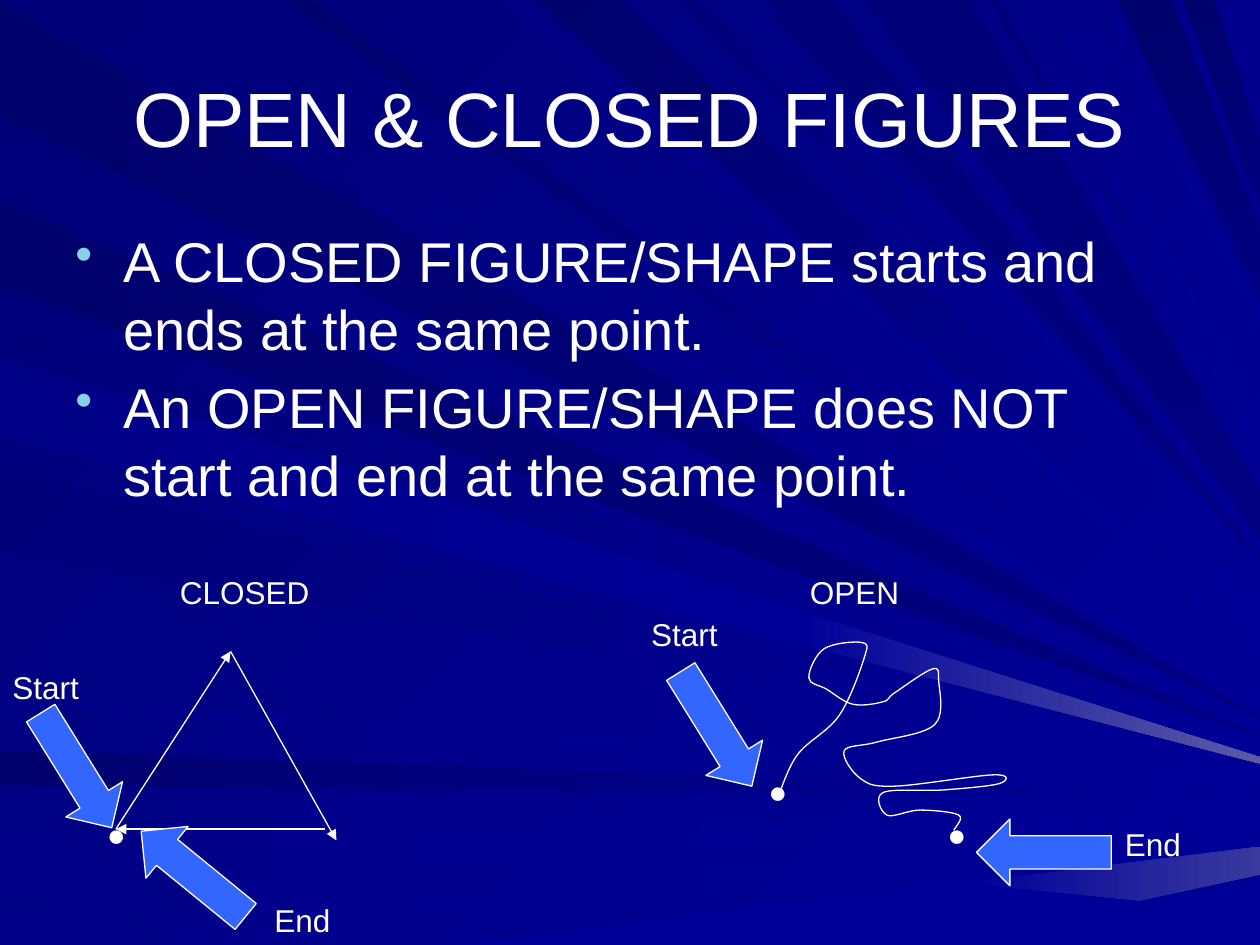
from dataclasses import dataclass

from lxml import etree
from pptx import Presentation
from pptx import util as u
from pptx.dml.color import RGBColor
from pptx.enum import shapes, text
from pptx.oxml import ns

COLORS = {"white": "FFFFFF", "arrow": "3366FF", "bullet": "86D1EC", "deep": "00006C",
          "dark": "000078", "navy": "000080", "middle": "000087", "blue": "000099",
          "glow": "5A5AA6", "haze": "39399E"}
FONT = "Arial"
WIDTH, HEIGHT = 10, 7.5
GLOW_START = 0.63


@dataclass
class Beam:
    """A beam from a span of one slide edge to a span of the right edge."""
    edge: str
    near: tuple
    far: tuple
    start: str
    end: str = "blue"
    angle: int = 0
    tip: str = ""


@dataclass
class Label:
    """A short text and its place in inches."""
    words: str
    left: float
    top: float
    width: float
    wrap: bool = True


@dataclass
class BlockArrow:
    """A block arrow turned clockwise by some degrees."""
    left: float
    top: float
    rotation: float


BEAMS = [
    Beam("left", (0.02, 0.93), (5.69, 5.7), "deep", "navy"),
    Beam("top", (0.26, 1.01), (5.63, 5.62), "dark", angle=45),
    Beam("left", (5.96, 6.23), (6.31, 6.32), "deep"),
    Beam("left", (6.65, 7.04), (6.43, 6.51), "middle"),
    Beam("left", (7.35, 7.5), (6.62, 6.63), "middle"),
    Beam("bottom", (3.64, 7.42), (6.72, 6.94), "blue", tip="haze"),
    Beam("left", (2.58, 2.7), (5.88, 5.89), "dark", angle=45),
    Beam("left", (1.59, 2.28), (5.84, 5.85), "deep", "navy"),
    Beam("top", (3.98, 4.16), (5.21, 5.15), "middle", angle=45),
    Beam("top", (4.26, 4.92), (5.07, 4.79), "deep", angle=45),
    Beam("top", (5.4, 5.52), (4.64, 4.63), "dark", angle=45),
    Beam("top", (6.06, 6.61), (4.46, 4.45), "dark", "navy", 90),
    Beam("top", (8.87, 9.3), (2.37, 1.83), "deep", "navy", 90),
    Beam("top", (9.39, 9.64), (1.67, 1.14), "deep", "navy", 90),
    Beam("left", (2.78, 3.42), (5.96, 6.02), "dark", angle=45),
    Beam("left", (3.74, 4.37), (6.05, 6.06), "dark", angle=45),
    Beam("left", (5.52, 5.6), (6.21, 6.23), "middle"),
    Beam("top", (2.25, 2.47), (5.52, 5.47), "deep", angle=45),
    Beam("top", (5.77, 5.88), (4.54, 4.53), "middle", angle=45),
    Beam("top", (6.86, 7.7), (4.28, 3.9), "dark", "navy", 90),
    Beam("top", (7.85, 7.92), (3.6, 3.54), "dark", angle=45),
    Beam("top", (8.15, 8.24), (3.36, 3.35), "middle", angle=45),
    Beam("top", (8.65, 8.72), (2.58, 2.49), "middle", angle=45),
    Beam("left", (2.83, 3.47), (6.01, 6.06), "middle", tip="glow"),
]
STATEMENTS = ["A CLOSED FIGURE/SHAPE starts and ends at the same point.",
              "An OPEN FIGURE/SHAPE does NOT start and end at the same point."]
TRIANGLE_SIDES = [((0.92, 6.58), (1.83, 5.17)), ((1.83, 5.17), (2.67, 6.67)),
                  ((2.58, 6.58), (0.92, 6.58))]
SCRIBBLE = [
    (6.17, 6.34), (6.33, 5.99), (6.66, 5.68), (6.86, 5.22), (6.84, 5.1), (6.54, 5.15),
    (6.42, 5.38), (6.56, 5.47), (6.77, 5.59), (7.01, 5.57), (7.1, 5.5), (7.4, 5.31),
    (7.45, 5.4), (7.42, 5.75), (6.96, 5.89), (6.7, 5.96), (6.83, 6.18), (7.1, 6.24),
    (7.89, 6.15), (7.93, 6.22), (7.49, 6.27), (7.01, 6.29), (7.04, 6.47), (7.3, 6.43),
    (7.61, 6.47), (7.57, 6.59)]
LABELS = [Label("CLOSED", 1.33, 4.5, 1.35), Label("OPEN", 6.33, 4.5, 1.1),
          Label("●", 0.75, 6.42, 0.35, False), Label("●", 6, 6.08, 0.35, False),
          Label("●", 7.42, 6.42, 0.35, False),
          Label("Start", 0, 5.25, 1.25), Label("End", 2.08, 7.1, 0.93),
          Label("Start", 5.07, 4.83, 0.85), Label("End", 8.83, 6.5, 0.85)]
BLOCK_ARROWS = [BlockArrow(0.07, 5.85, 58.2), BlockArrow(1, 6.67, 219.2),
                BlockArrow(5.15, 5.52, 58.2), BlockArrow(7.75, 6.5, 180)]


def rgb(name: str) -> RGBColor:
    return RGBColor.from_string(COLORS[name])


def paint(fill, start: str, end: str, angle: int = 0) -> None:
    if start == end:
        fill.solid()
        fill.fore_color.rgb = rgb(start)
        return
    fill.gradient()
    fill.gradient_angle = (360 - angle) % 360
    for stop, color in zip(fill.gradient_stops, (start, end)):
        stop.color.rgb = rgb(color)


def outline(line) -> None:
    line.color.rgb = rgb("white")
    line.width = u.Pt(0.75)


def add_path(slide, points: list, close: bool):
    vertices = [(u.Inches(x), u.Inches(y)) for x, y in points]
    builder = slide.shapes.build_freeform(*vertices[0])
    builder.add_line_segments(vertices[1:], close=close)
    shape = builder.convert_to_shape()
    shape.shadow.inherit = False
    return shape


def between(start: tuple, end: tuple, share: float) -> tuple:
    return tuple(a + (b - a) * share for a, b in zip(start, end))


def add_beam(slide, beam: Beam) -> None:
    places = {"left": lambda value: (0, value), "top": lambda value: (value, 0),
              "bottom": lambda value: (value, HEIGHT)}
    near = [places[beam.edge](value) for value in beam.near]
    far = [(WIDTH, value) for value in beam.far]
    parts = [(near, far, beam.start, beam.end)]
    if beam.tip:
        middle = [between(a, b, GLOW_START) for a, b in zip(near, far)]
        parts = [(near, middle, beam.start, beam.end), (middle, far, beam.end, beam.tip)]
    for first, last, start, end in parts:
        shape = add_path(slide, first + last[::-1], True)
        paint(shape.fill, start, end, beam.angle)
        shape.line.fill.background()


def smooth_points(anchors: list) -> list:
    padded = [anchors[0], *anchors, anchors[-1]]
    points = [anchors[0]]
    for before, start, end, after in zip(padded, padded[1:], padded[2:], padded[3:]):
        points.append(tuple(s + (e - b) / 6 for b, s, e in zip(before, start, end)))
        points.append(tuple(e - (a - s) / 6 for s, e, a in zip(start, end, after)))
        points.append(end)
    return points


def add_curve(slide, anchors: list) -> None:
    shape = add_path(slide, smooth_points(anchors), False)
    shape.fill.background()
    outline(shape.line)
    segments = list(shape._element.iter(ns.qn("a:lnTo")))
    for first in range(0, len(segments), 3):
        curve = etree.SubElement(segments[first].getparent(), ns.qn("a:cubicBezTo"))
        for segment in segments[first:first + 3]:
            curve.append(segment[0])
            segment.getparent().remove(segment)


def add_side(slide, start: tuple, end: tuple) -> None:
    connector = slide.shapes.add_connector(
        shapes.MSO_CONNECTOR.STRAIGHT, *[u.Inches(value) for value in start + end])
    outline(connector.line)
    etree.SubElement(connector.line._get_or_add_ln(), ns.qn("a:tailEnd"), type="triangle")
    etree.SubElement(connector._element.spPr, ns.qn("a:effectLst"))


def add_block_arrow(slide, arrow: BlockArrow) -> None:
    shape = slide.shapes.add_shape(shapes.MSO_SHAPE.RIGHT_ARROW, u.Inches(arrow.left),
                                   u.Inches(arrow.top), u.Inches(1.07), u.Inches(0.53))
    shape.rotation = arrow.rotation
    shape.shadow.inherit = False
    paint(shape.fill, "arrow", "arrow")
    outline(shape.line)


def add_text(slide, label: Label, height: float = 0.4, size: int = 18):
    box = slide.shapes.add_textbox(u.Inches(label.left), u.Inches(label.top),
                                   u.Inches(label.width), u.Inches(height))
    frame = box.text_frame
    frame.text = label.words
    frame.word_wrap = label.wrap
    for paragraph in frame.paragraphs:
        for run in paragraph.runs:
            run.font.name = FONT
            run.font.size = u.Pt(size)
            run.font.color.rgb = rgb("white")
    return frame


def add_bullet(paragraph) -> None:
    properties = paragraph._p.get_or_add_pPr()
    properties.set("marL", str(u.Inches(0.38)))
    properties.set("indent", str(u.Inches(-0.38)))
    color = etree.SubElement(properties, ns.qn("a:buClr"))
    etree.SubElement(color, ns.qn("a:srgbClr"), val=COLORS["bullet"])
    etree.SubElement(properties, ns.qn("a:buSzPct"), val="90000")
    etree.SubElement(properties, ns.qn("a:buChar"), char="•")
    paragraph.line_spacing = u.Pt(38.5)


def main() -> None:
    """Build the slide on open and closed figures."""
    presentation = Presentation()
    presentation.slide_width, presentation.slide_height = u.Inches(WIDTH), u.Inches(HEIGHT)
    slide = presentation.slides.add_slide(presentation.slide_layouts[6])
    paint(slide.background.fill, "dark", "blue", 45)
    for beam in BEAMS:
        add_beam(slide, beam)
    title = add_text(slide, Label("OPEN & CLOSED FIGURES", 0.5, 0.3, 9), 1.25, 44)
    title.vertical_anchor = text.MSO_ANCHOR.MIDDLE
    title.paragraphs[0].alignment = text.PP_ALIGN.CENTER
    body = add_text(slide, Label("\n".join(STATEMENTS), 0.5, 1.75, 9), 4.95, 32)
    for paragraph in body.paragraphs:
        add_bullet(paragraph)
    body.paragraphs[1].space_before = u.Pt(6.4)
    for start, end in TRIANGLE_SIDES:
        add_side(slide, start, end)
    add_curve(slide, SCRIBBLE)
    for label in LABELS:
        add_text(slide, label)
    for arrow in BLOCK_ARROWS:
        add_block_arrow(slide, arrow)
    presentation.save("out.pptx")


if __name__ == "__main__":
    main()
